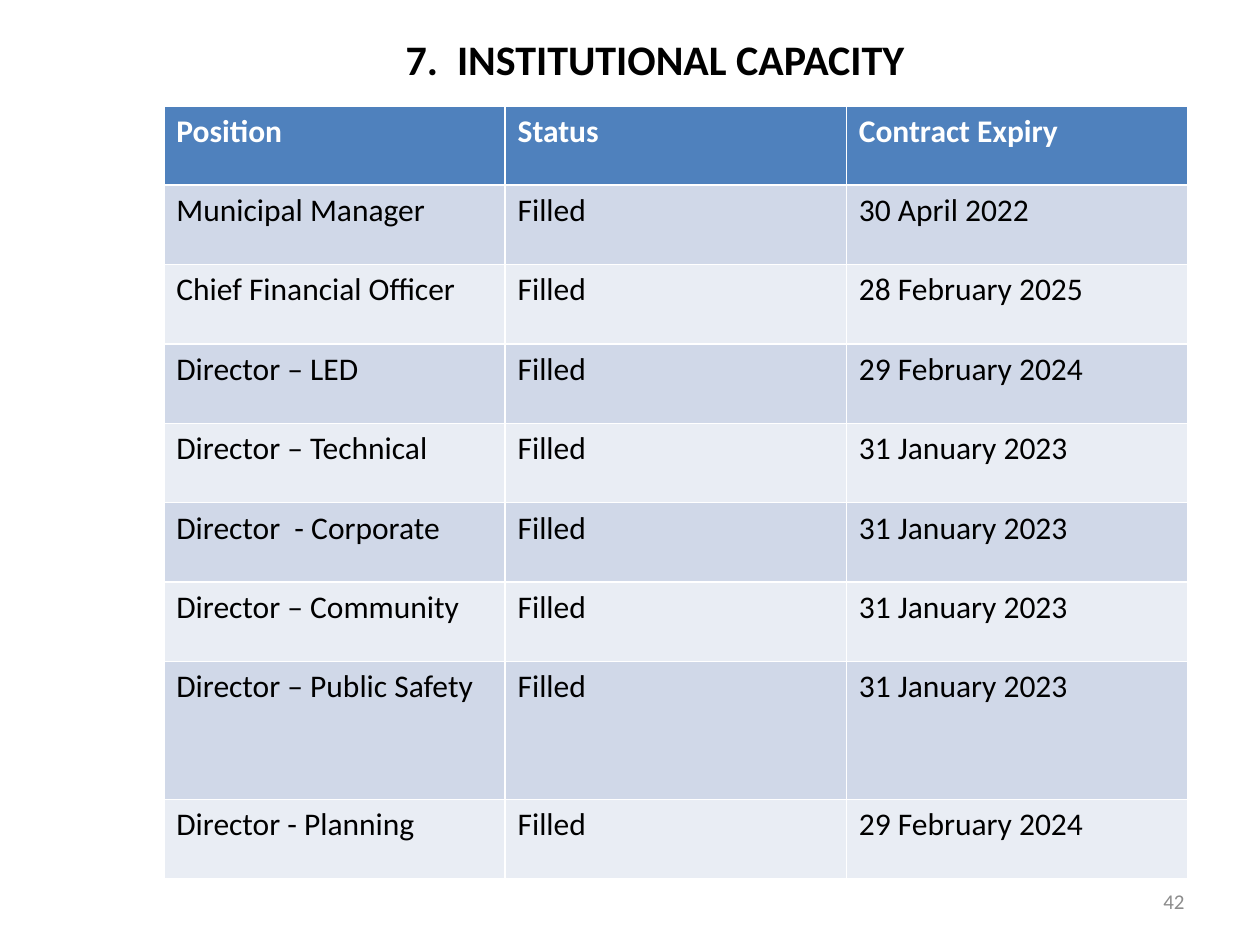
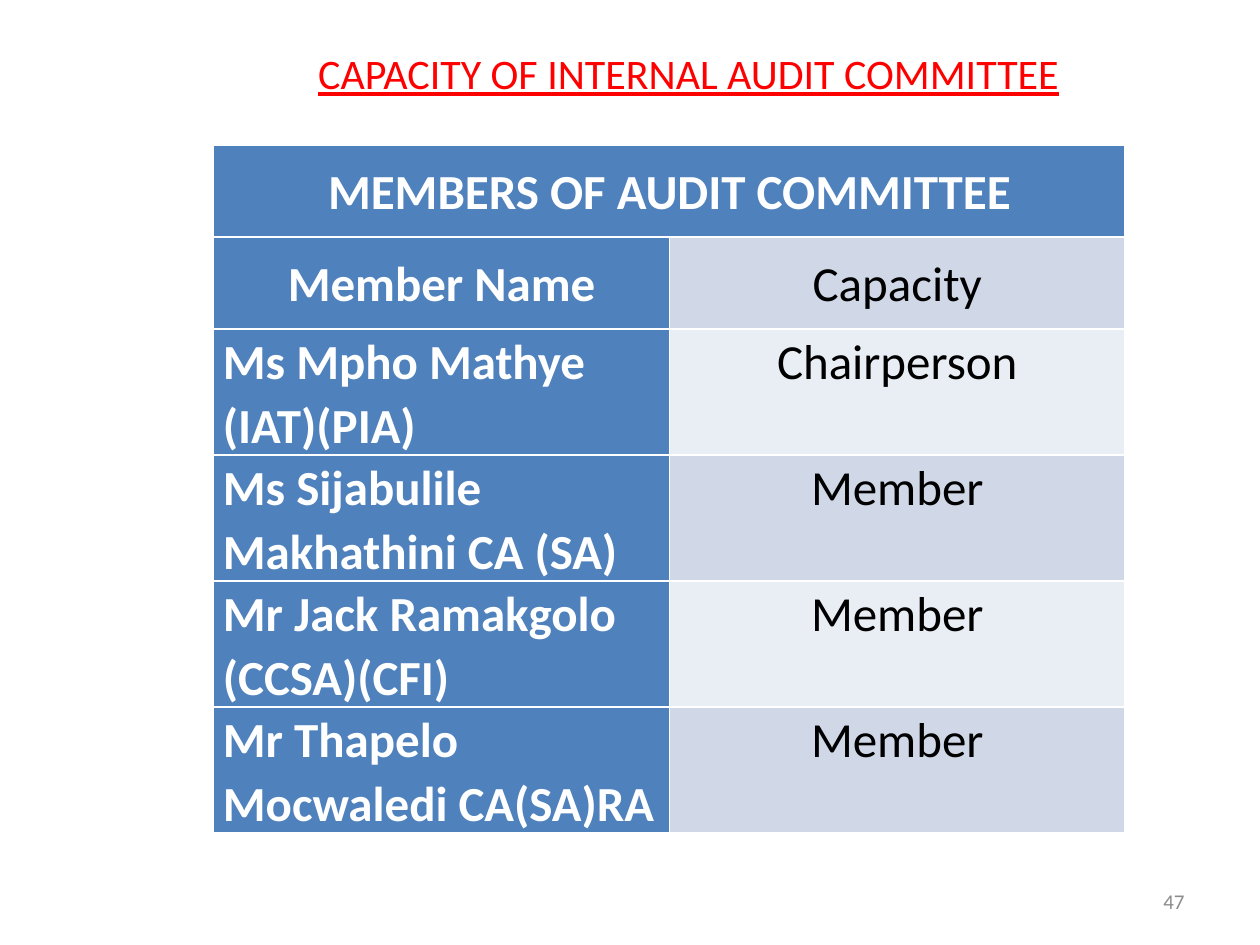
"""Build two slides on institutional capacity and the internal audit committee."""
from dataclasses import dataclass

from pptx import Presentation
from pptx.dml.color import RGBColor
from pptx.enum.text import MSO_ANCHOR, PP_ALIGN
from pptx.util import Pt

LEFT, CENTER, RIGHT = PP_ALIGN.LEFT, PP_ALIGN.CENTER, PP_ALIGN.RIGHT
TOP, MIDDLE = MSO_ANCHOR.TOP, MSO_ANCHOR.MIDDLE
TITLE_ONLY = 5


@dataclass(frozen=True)
class Theme:
    font: str = "Calibri"
    black: str = "000000"
    white: str = "FFFFFF"
    red: str = "FF0000"
    grey: str = "8C8C8C"
    header: str = "4F81BD"
    bands: tuple = ("D0D8E8", "E9EDF4")
    title_size: int = 24
    position_size: int = 18
    member_size: int = 28
    number_size: int = 12


THEME = Theme()

POSITIONS = [
    ("Position", "Status", "Contract Expiry"),
    ("Municipal Manager", "Filled", "30 April 2022"),
    ("Chief Financial Officer", "Filled", "28 February 2025"),
    ("Director – LED", "Filled", "29 February 2024"),
    ("Director – Technical", "Filled", "31 January 2023"),
    ("Director  - Corporate", "Filled", "31 January 2023"),
    ("Director – Community", "Filled", "31 January 2023"),
    ("Director – Public Safety", "Filled", "31 January 2023"),
    ("Director - Planning", "Filled", "29 February 2024"),
]
PUBLIC_SAFETY_ROW = 7

MEMBERS = [
    ("MEMBERS OF AUDIT COMMITTEE", ""),
    ("Member Name", "Capacity"),
    ("Ms Mpho Mathye (IAT)(PIA)", "Chairperson"),
    ("Ms Sijabulile Makhathini CA (SA)", "Member"),
    ("Mr Jack Ramakgolo (CCSA)(CFI)", "Member"),
    ("Mr Thapelo Mocwaledi CA(SA)RA", "Member"),
]


def write(frame, text, size, color, align=LEFT, bold=False, underline=None):
    para = frame.paragraphs[0]
    para.alignment = align
    span = para.add_run()
    span.text = text
    font = span.font
    font.name, font.size = THEME.font, Pt(size)
    font.bold, font.underline = bold, underline
    font.color.rgb = RGBColor.from_string(color)
    return para


def add_page(deck, title, title_area, number, **title_style):
    page = deck.slides.add_slide(deck.slide_layouts[TITLE_ONLY])
    box = page.shapes.title
    box.left, box.top, box.width, box.height = map(Pt, title_area)
    box.text_frame.vertical_anchor = MIDDLE
    write(box.text_frame, title, THEME.title_size, align=CENTER, **title_style)

    number_box = page.shapes.add_textbox(Pt(516), Pt(500.5), Pt(168), Pt(28.75))
    number_box.text_frame.word_wrap = True
    number_box.text_frame.vertical_anchor = MIDDLE
    write(number_box.text_frame, number, THEME.number_size, THEME.grey, RIGHT)
    return page


def add_grid(page, rows, left, top, column_width, row_heights, size, first_col=False):
    columns = len(rows[0])
    table = page.shapes.add_table(
        len(rows), columns, Pt(left), Pt(top),
        Pt(column_width * columns), Pt(sum(row_heights))).table
    table.first_col = first_col
    for row, height in zip(table.rows, row_heights):
        row.height = Pt(height)
    for r, texts in enumerate(rows):
        for c, text in enumerate(texts):
            heading = r == 0 or (first_col and c == 0)
            cell = table.cell(r, c)
            cell.fill.solid()
            fill = THEME.header if heading else THEME.bands[(r - 1) % 2]
            cell.fill.fore_color.rgb = RGBColor.from_string(fill)
            if text:
                color = THEME.white if heading else THEME.black
                write(cell.text_frame, text, size, color, bold=heading)
    return table


def add_positions(deck):
    page = add_page(deck, "7.  INSTITUTIONAL CAPACITY ", (127.5, 0, 499, 67), "42",
                    color=THEME.black, bold=True)
    heights = [79 if r == PUBLIC_SAFETY_ROW else 45.36 for r in range(len(POSITIONS))]
    add_grid(page, POSITIONS, 93.6, 60.5, 195, heights, THEME.position_size)


def add_members(deck):
    page = add_page(deck, "CAPACITY OF INTERNAL AUDIT COMMITTEE", (104.5, 0, 578, 83), "47",
                    color=THEME.red, underline=True)
    table = add_grid(page, MEMBERS, 122, 83, 260.5, [52.5] * len(MEMBERS),
                     THEME.member_size, first_col=True)
    table.cell(0, 0).merge(table.cell(0, 1))
    for r in range(len(MEMBERS)):
        for c in range(2):
            cell = table.cell(r, c)
            cell.margin_left = cell.margin_right = Pt(5.4)
            cell.margin_top = cell.margin_bottom = Pt(0)
            cell.vertical_anchor = MIDDLE if r < 2 else TOP
            para = cell.text_frame.paragraphs[0]
            para.line_spacing = 1.07
            para.alignment = CENTER if r < 2 or c else LEFT


def main():
    deck = Presentation()
    deck.slide_width, deck.slide_height = Pt(720), Pt(540)
    add_positions(deck)
    add_members(deck)
    deck.save("out.pptx")


if __name__ == "__main__":
    main()
